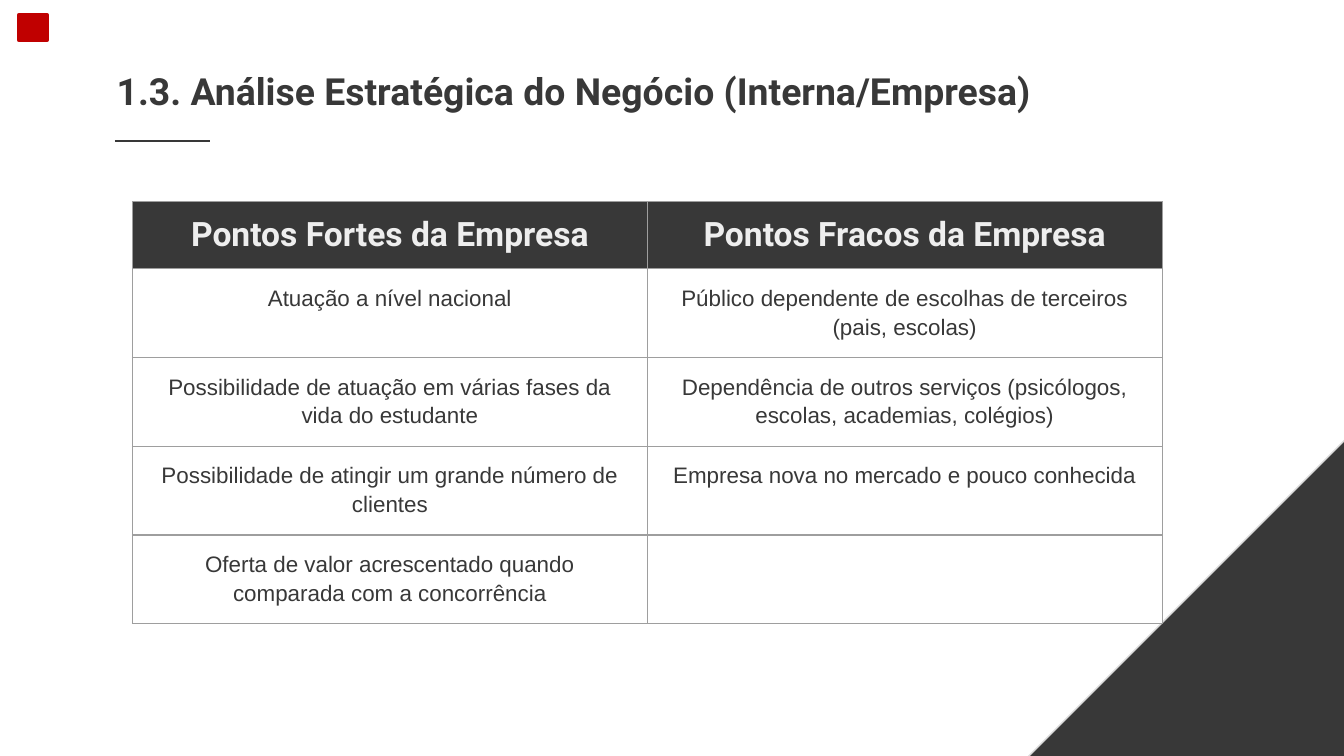
from lxml.etree import SubElement
from pptx import Presentation
from pptx.dml.color import RGBColor
from pptx.enum.shapes import MSO_CONNECTOR, MSO_SHAPE
from pptx.enum.text import PP_ALIGN
from pptx.oxml.ns import qn
from pptx.util import Pt

DARK = RGBColor(0x38, 0x38, 0x38)
PALE = RGBColor(0xEE, 0xEE, 0xEE)
WHITE = RGBColor(0xFF, 0xFF, 0xFF)
RED = RGBColor(0xC0, 0x00, 0x00)
EDGE = RGBColor(0xDB, 0xDB, 0xDB)
GREY = RGBColor(0x9E, 0x9E, 0x9E)

ROWS = [
    ("Pontos Fortes da Empresa", "Pontos Fracos da Empresa"),
    ("Atuação a nível nacional",
     "Público dependente de escolhas de terceiros (pais, escolas)"),
    ("Possibilidade de atuação em várias fases da vida do estudante",
     "Dependência de outros serviços (psicólogos, escolas, academias, colégios)"),
    ("Possibilidade de atingir um grande número de clientes",
     "Empresa nova no mercado e pouco conhecida"),
    ("Oferta de valor acrescentado quando comparada com a concorrência", ""),
]


def style(para, font, size, color, bold, loose):
    if loose:
        para.line_spacing = 1.15
        para.space_before = para.space_after = Pt(12)
    for run in para.runs:
        run.font.name = font
        run.font.size = Pt(size)
        run.font.bold = bold
        run.font.color.rgb = color


def pad(box):
    box.margin_left = box.margin_right = Pt(7.2)
    box.margin_top = box.margin_bottom = Pt(7.2)


deck = Presentation()
deck.slide_width = Pt(720)
deck.slide_height = Pt(405)
slide = deck.slides.add_slide(deck.slide_layouts[6])
shapes = slide.shapes

for kind, left, top, width, height, turn, fill, line, weight in [
    (MSO_SHAPE.RIGHT_TRIANGLE, 457.2, 121, 378, 378, 270, DARK, EDGE, 0.75),
    (MSO_SHAPE.RECTANGLE, 10.08, 7.92, 15.12, 13.68, 0, RED, RED, 2),
]:
    shape = shapes.add_shape(kind, Pt(left), Pt(top), Pt(width), Pt(height))
    shape.rotation = turn
    shape.shadow.inherit = False
    shape.fill.solid()
    shape.fill.fore_color.rgb = fill
    shape.line.color.rgb = line
    shape.line.width = Pt(weight)

title = shapes.add_textbox(Pt(55.44), Pt(25.92), Pt(637.92), Pt(41.76))
frame = title.text_frame
frame.word_wrap = True
pad(frame)
frame.text = "1.3. Análise Estratégica do Negócio (Interna/Empresa)"
style(frame.paragraphs[0], "Roboto", 20, DARK, True, True)

rule = shapes.add_connector(
    MSO_CONNECTOR.STRAIGHT, Pt(61.5), Pt(75.6), Pt(112.5), Pt(75.6))
rule.line.color.rgb = DARK
rule.line.width = Pt(1.5)
SubElement(rule.element.spPr, qn("a:effectLst"))

table = shapes.add_table(
    5, 2, Pt(71), Pt(108), Pt(551.6), Pt(216.1)).table
for col in table.columns:
    col.width = Pt(275.8)

for i, texts in enumerate(ROWS):
    head = i == 0
    table.rows[i].height = Pt(35.3 if head else 45.2)
    for j, text in enumerate(texts):
        cell = table.cell(i, j)
        pad(cell)
        props = cell._tc.get_or_add_tcPr()
        for side in ("lnL", "lnR", "lnT", "lnB"):
            line = SubElement(props, qn("a:" + side), w=str(Pt(0.75)))
            fill = SubElement(line, qn("a:solidFill"))
            SubElement(fill, qn("a:srgbClr"), val=str(GREY))
        cell.fill.solid()
        cell.fill.fore_color.rgb = DARK if head else WHITE
        cell.text_frame.text = text
        para = cell.text_frame.paragraphs[0]
        para.alignment = PP_ALIGN.CENTER
        if head:
            style(para, "Roboto", 18, PALE, True, False)
        else:
            style(para, "Arial", 12, DARK, False, True)

deck.save("out.pptx")
